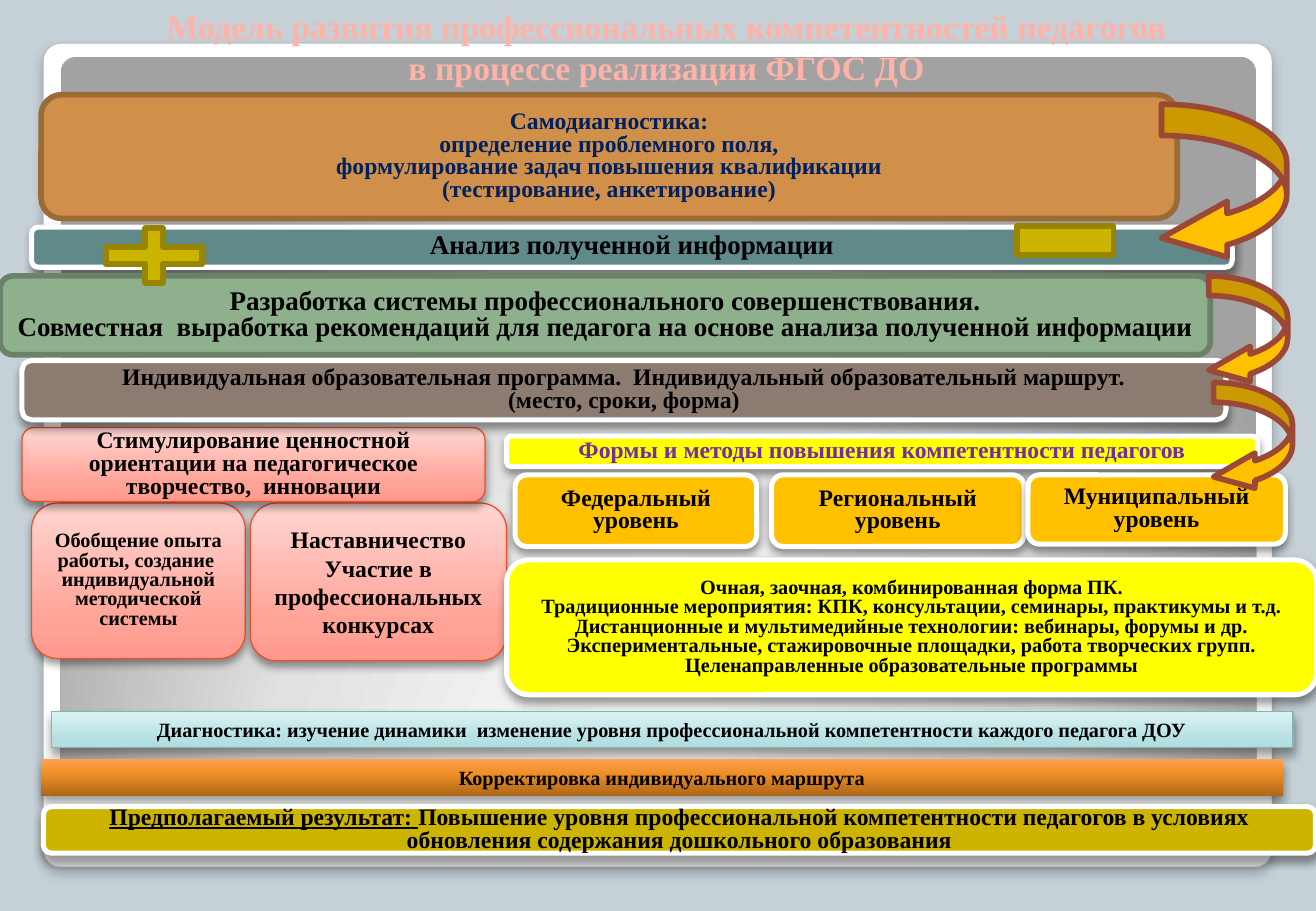
from lxml import etree
from pptx import Presentation
from pptx.dml.color import RGBColor
from pptx.enum.shapes import MSO_SHAPE as Shape
from pptx.enum.text import MSO_ANCHOR as Anchor, MSO_AUTO_SIZE as AutoSize, PP_ALIGN as Align
from pptx.oxml.ns import qn
from pptx.util import Cm, Pt

BACKGROUND = RGBColor(0xC5, 0xD1, 0xD7)
WHITE = RGBColor(0xFF, 0xFF, 0xFF)
BLACK = RGBColor(0x00, 0x00, 0x00)
PANEL_EDGE = RGBColor(0xA4, 0xA4, 0xA4)
TITLE_PINK = RGBColor(0xFF, 0xB2, 0xA8)
NAVY = RGBColor(0x00, 0x20, 0x60)
PURPLE = RGBColor(0x70, 0x30, 0xA0)
TEAL = RGBColor(0x61, 0x89, 0x8A)
GREEN = RGBColor(0x8F, 0xB0, 0x8C)
GREEN_EDGE = RGBColor(0x6A, 0x82, 0x68)
TAN = RGBColor(0xD1, 0x90, 0x49)
TAN_EDGE = RGBColor(0x9B, 0x6B, 0x36)
TAUPE = RGBColor(0x8C, 0x7B, 0x70)
OLIVE = RGBColor(0xCC, 0xB4, 0x00)
OLIVE_EDGE = RGBColor(0x97, 0x85, 0x00)
YELLOW = RGBColor(0xFF, 0xFF, 0x00)
AMBER = RGBColor(0xFF, 0xC0, 0x00)
ARROW_EDGE = RGBColor(0x9B, 0x49, 0x36)
RED_EDGE = RGBColor(0xF3, 0x4E, 0x27)
AQUA_EDGE = RGBColor(0x84, 0xB5, 0xB6)

# Gradients: (position in percent, colour) stops
PANEL_STOPS = [(0, "FFFFFF"), (98, "FFFFFF"), (99, "F7F7F7"), (100, "DADADA")]
GLOW_STOPS = [(0, "FFFFFF"), (55, "E1E1E1"), (100, "A2A2A2")]
PINK_STOPS = [(0, "FF9A8C"), (25, "FFA397"), (100, "FFD6D2")]
AQUA_STOPS = [(0, "B1DCDD"), (25, "B6E0E2"), (100, "DCF3F4")]
ORANGE_STOPS = [(0, "AE6719"), (60, "EE8E26"), (100, "FFA151")]

# Shadows: opacity in percent, blur and distance in points
CARD_SHADOW = (40, 5.2, 3)
PANEL_SHADOW = (25, 6, 4)
WHITE_EDGE = (WHITE, 3)


class ModelSlide:
    font = "Times New Roman"

    def __init__(self):
        self.deck = Presentation()
        self.deck.slide_width, self.deck.slide_height = Cm(27.51), Cm(19.05)
        self.page = self.deck.slides.add_slide(self.deck.slide_layouts[5])
        self.page.background.fill.solid()
        self.page.background.fill.fore_color.rgb = BACKGROUND

    def shape(self, kind, place, fill, edge=None, shadow=None, adjust=()):
        box = self.page.shapes.add_shape(kind, *map(Cm, place))
        for index, value in enumerate(adjust):
            box.adjustments[index] = value
        if isinstance(fill, RGBColor):
            box.fill.solid()
            box.fill.fore_color.rgb = fill
        else:
            self.gradient(box, *fill)
        if edge:
            box.line.color.rgb, box.line.width = edge[0], Pt(edge[1])
        else:
            box.line.fill.background()
        box.shadow.inherit = False
        if shadow:
            self.drop_shadow(box, *shadow)
        return box

    def gradient(self, box, stops, angle=None):
        """Linear at the given angle, or circular from below without one."""
        grad = etree.Element(qn("a:gradFill"), rotWithShape="1")
        stop_list = etree.SubElement(grad, qn("a:gsLst"))
        for position, colour in stops:
            stop = etree.SubElement(stop_list, qn("a:gs"), pos=str(position * 1000))
            etree.SubElement(stop, qn("a:srgbClr"), val=colour)
        if angle is None:
            circle = etree.SubElement(grad, qn("a:path"), path="circle")
            etree.SubElement(circle, qn("a:fillToRect"), l="50000", t="175000", r="50000", b="-75000")
        else:
            etree.SubElement(grad, qn("a:lin"), ang=str(angle * 60000), scaled="0")
        box.fill.background()
        properties = box._element.spPr
        properties.replace(properties.find(qn("a:noFill")), grad)

    def drop_shadow(self, box, opacity, blur, distance):
        effects = box._element.spPr.find(qn("a:effectLst"))
        outer = etree.SubElement(effects, qn("a:outerShdw"), blurRad=str(int(Pt(blur))),
                                 dist=str(int(Pt(distance))), dir="5400000", rotWithShape="0")
        colour = etree.SubElement(outer, qn("a:srgbClr"), val=str(BLACK))
        etree.SubElement(colour, qn("a:alpha"), val=str(opacity * 1000))

    def put_text(self, box, lines, size, colour=BLACK, spacing=0.8, anchor=Anchor.MIDDLE, wrap=True):
        frame = box.text_frame
        frame.word_wrap, frame.auto_size = wrap, AutoSize.NONE
        frame.vertical_anchor = anchor
        frame.margin_left = frame.margin_right = Cm(0.25)
        frame.margin_top = frame.margin_bottom = Cm(0.13)
        for index, line in enumerate(lines):
            para = frame.add_paragraph() if index else frame.paragraphs[0]
            para.text = line
            para.alignment, para.line_spacing = Align.CENTER, spacing
            para.space_before = para.space_after = Pt(0)
            para.font.name, para.font.size, para.font.bold = self.font, Pt(size), True
            para.font.color.rgb = colour

    def block(self, place, lines, size, fill, edge=WHITE_EDGE, shadow=CARD_SHADOW,
              kind=Shape.ROUNDED_RECTANGLE, **text_style):
        box = self.shape(kind, place, fill, edge, shadow)
        self.put_text(box, lines, size, **text_style)
        return box

    def title(self, place, lines):
        box = self.page.shapes.title
        box.left, box.top, box.width, box.height = map(Cm, place)
        self.put_text(box, lines, 20, TITLE_PINK, 1.0, Anchor.TOP, wrap=False)
        self.page.shapes._spTree.append(box._element)  # bring to front


def main():
    slide = ModelSlide()

    # Backing panels
    slide.shape(Shape.ROUNDED_RECTANGLE, (0.91, 0.91, 25.68, 17.22), (PANEL_STOPS, 90),
                (PANEL_EDGE, 0.16), PANEL_SHADOW, [0.021])
    slide.shape(Shape.ROUNDED_RECTANGLE, (1.27, 1.19, 24.99, 15.24), (GLOW_STOPS,), adjust=[0.021])

    # Analysis and development
    slide.block((0.66, 4.75, 25.1, 0.84), ["Анализ полученной информации"], 16, TEAL)
    slide.block((0, 5.77, 25.3, 1.65), [
        "Разработка системы профессионального совершенствования.",
        "Совместная  выработка рекомендаций для педагога на основе анализа полученной информации",
    ], 16, GREEN, (GREEN_EDGE, 3.35), None)
    for sign, place in ((Shape.MATH_PLUS, (1.85, 4.57, 2.74, 1.55)),
                        (Shape.MATH_MINUS, (20.9, 3.76, 2.74, 2.54))):
        slide.shape(sign, place, OLIVE, (OLIVE_EDGE, 3.35))

    # Self-diagnosis
    slide.block((0.86, 1.98, 23.75, 2.59), [
        "Самодиагностика:",
        "определение проблемного поля,",
        "формулирование задач повышения квалификации",
        "(тестирование, анкетирование)",
    ], 14, TAN, (TAN_EDGE, 3.35), None, colour=NAVY)

    # Motivation group
    pink = {"fill": (PINK_STOPS, 270), "edge": (RED_EDGE, 0.75)}
    slide.block((0.66, 10.52, 4.47, 3.25), [
        "Обобщение опыта работы, создание  индивидуальной методической системы"], 12, **pink)
    slide.block((5.23, 10.52, 5.36, 3.3), [
        "Наставничество", "Участие в профессиональных конкурсах"], 14, spacing=1.0, **pink)
    slide.block((0.46, 8.94, 9.68, 1.55), [
        "Стимулирование ценностной ориентации на педагогическое творчество,  инновации"], 14, **pink)

    # Individual programme
    slide.block((0.46, 7.54, 25.17, 1.24), [
        "Индивидуальная образовательная программа.  Индивидуальный образовательный маршрут.",
        "(место, сроки, форма)",
    ], 14, TAUPE)

    # Forms, methods and levels
    slide.block((10.59, 9.12, 15.7, 0.64), [
        "Формы и методы повышения компетентности педагогов"], 14, YELLOW, colour=PURPLE)
    for level, left, width, height in (("Федеральный", 10.77, 5.05, 1.5),
                                       ("Региональный", 16.13, 5.28, 1.5),
                                       ("Муниципальный", 21.49, 5.38, 1.45)):
        slide.block((left, 9.93, width, height), [f"{level} уровень"], 14, AMBER)
    slide.block((10.59, 11.71, 16.94, 2.82), [
        "Очная, заочная, комбинированная форма ПК.",
        "Традиционные мероприятия: КПК, консультации, семинары, практикумы и т.д.",
        "Дистанционные и мультимедийные технологии: вебинары, форумы и др.",
        "Экспериментальные, стажировочные площадки, работа творческих групп.",
        "Целенаправленные образовательные программы",
    ], 12, YELLOW)

    # Arrows between the stages
    for place in ((24.28, 2.18, 2.62, 3.38), (25.37, 8, 1.65, 2.34), (25.27, 5.77, 1.65, 2.34)):
        slide.shape(Shape.CURVED_LEFT_ARROW, place, AMBER, (ARROW_EDGE, 3.35),
                    adjust=[0.25, 0.445, 0.524])

    # Diagnosis, correction and result
    strip = {"kind": Shape.RECTANGLE, "spacing": 1.0}
    slide.block((1.07, 14.88, 25.96, 0.76), [
        "Диагностика: изучение динамики  изменение уровня профессиональной компетентности "
        "каждого педагога ДОУ"], 12, (AQUA_STOPS, 270), (AQUA_EDGE, 0.75), **strip)
    slide.block((0.86, 15.88, 25.96, 0.76), ["Корректировка индивидуального маршрута"],
                12, (ORANGE_STOPS, 270), None, **strip)
    result = slide.block((0.91, 16.87, 26.59, 0.97), ["Предполагаемый результат: "], 14, OLIVE)
    para = result.text_frame.paragraphs[0]
    para.runs[0].font.underline = True
    span = para.add_run()
    span.text = ("Повышение уровня профессиональной компетентности педагогов в условиях "
                 "обновления содержания дошкольного образования")

    # Title
    slide.title((3.05, 0, 21.77, 1.96), [
        "Модель развития профессиональных компетентностей педагогов",
        "в процессе реализации ФГОС ДО",
    ])
    slide.deck.save("out.pptx")


if __name__ == "__main__":
    main()
